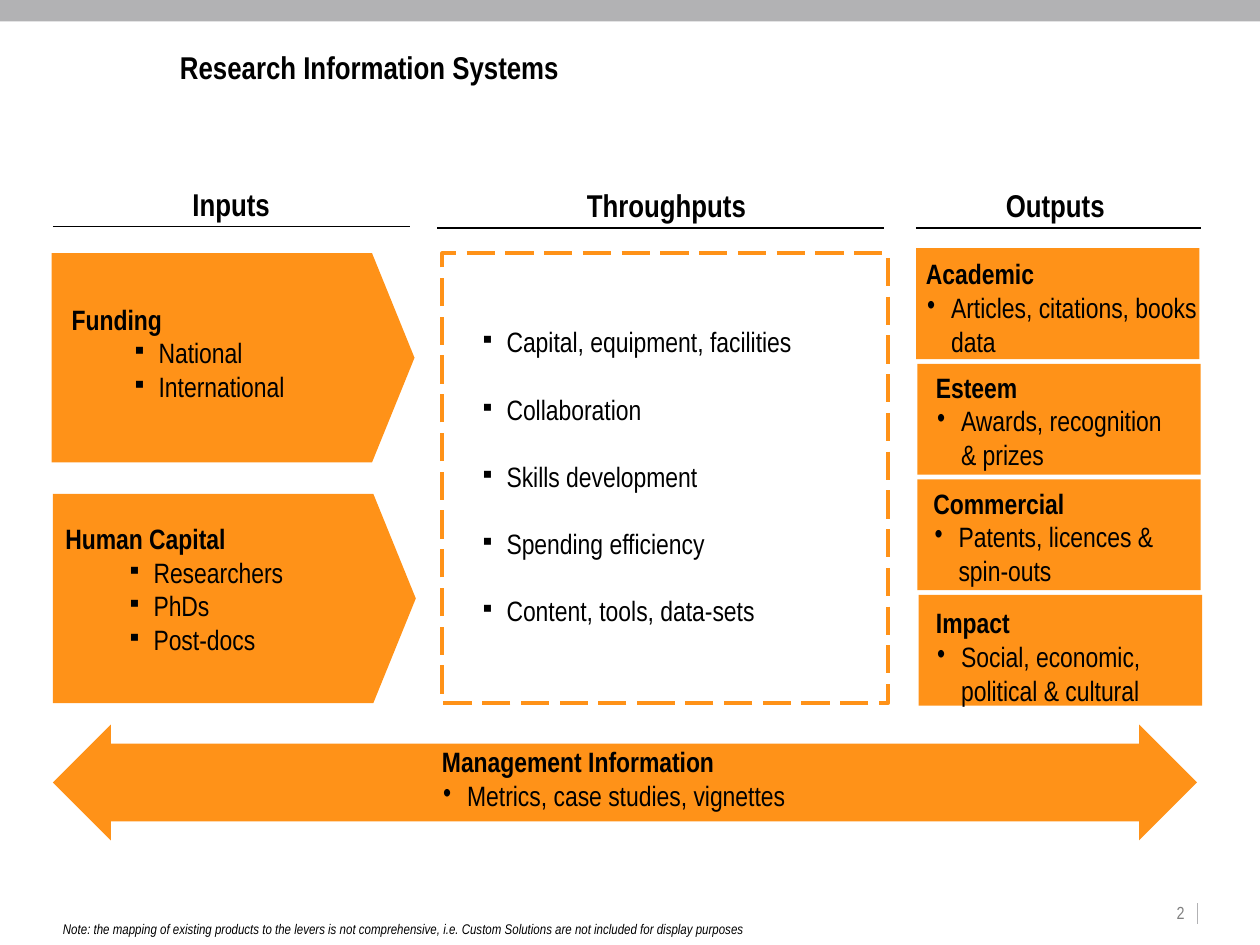
"""Build the Research Information Systems slide: inputs, throughputs and outputs."""
from lxml import etree
from pptx import Presentation
from pptx import util as u
from pptx.dml.color import RGBColor
from pptx.enum import dml, shapes, text
from pptx.oxml.ns import qn

FONT = "Arial Narrow"
COLORS = {"orange": "FF9218", "gray": "B2B2B4", "number": "808080", "black": "000000"}
SQUARE, DOT = "▪", "•"
HANG = 0.19

TITLE = "Research Information Systems"
NOTE = ("Note: the mapping of existing products to the levers is not comprehensive, "
        "i.e. Custom Solutions are not included for display purposes")
COLUMNS = [
    ("Inputs", (0.42, 1.42, 2.83), (0.42, 3.25, 1.8)),
    ("Throughputs", (3.5, 1.43, 3.58), (3.47, 7.02, 1.81)),
    ("Outputs", (7.25, 1.43, 2.25), (7.27, 9.53, 1.81)),
]
INPUTS = [
    ("Funding", ["National", "International"], (0.41, 2.01), (0.47, 2.35, 2.18, 0.91), 0.69),
    ("Human Capital", ["Researchers", "PhDs", "Post-docs"], (0.42, 3.92),
     (0.42, 4.09, 2.75, 1.18), 0.7),
]
THROUGHPUTS = ["Capital, equipment, facilities", "Collaboration", "Skills development",
               "Spending efficiency", "Content, tools, data-sets"]
OUTPUTS = [
    ("Academic", "Articles, citations, books data", 7.27, (7.25, 1.99, 2.35, 0.91)),
    ("Esteem", "Awards, recognition & prizes", 7.28, (7.33, 2.89, 2.1, 0.91)),
    ("Commercial", "Patents, licences & spin-outs", 7.28, (7.31, 3.81, 2.1, 0.91)),
    ("Impact", "Social, economic, political & cultural", 7.29, (7.33, 4.76, 2.1, 0.91)),
]
OUTPUT_TOP, OUTPUT_PITCH = 1.97, 0.917
MANAGEMENT = ("Management Information", "Metrics, case studies, vignettes")


def color(name):
    return RGBColor.from_string(COLORS[name])


def add_block(page, kind, place, fill=None, adjust=()):
    block = page.shapes.add_shape(kind, *map(u.Inches, place))
    block.shadow.inherit = False
    for index, value in enumerate(adjust):
        block.adjustments[index] = value
    if fill:
        block.fill.solid()
        block.fill.fore_color.rgb = color(fill)
    else:
        block.fill.background()
    block.line.fill.background()
    return block


def add_rule(page, start, end, shade="black", width=0.75):
    rule = page.shapes.add_connector(shapes.MSO_CONNECTOR.STRAIGHT,
                                     *map(u.Inches, (*start, *end)))
    rule.line.color.rgb = color(shade)
    rule.line.width = u.Pt(width)
    etree.SubElement(rule._element.spPr, qn("a:effectLst"))


def set_bullet(para, mark, margin):
    props = para._p.get_or_add_pPr()
    props.set("marL", str(u.Inches(margin)))
    props.set("indent", str(u.Inches(-HANG)))
    etree.SubElement(props, qn("a:buFont")).set("typeface", FONT)
    etree.SubElement(props, qn("a:buChar")).set("char", mark)


def add_text(page, place, lines, size=16, bold=False, italic=False, shade="black",
             align=text.PP_ALIGN.LEFT, bullet=None, gap=0, tight=False):
    """Add a text box; bullet is (mark, margin, level, first bulleted line)."""
    box = page.shapes.add_textbox(*map(u.Inches, place))
    frame = box.text_frame
    frame.word_wrap = True
    if tight:
        frame.margin_left = frame.margin_top = 0
    frame.text = "\n".join(lines)
    for index, para in enumerate(frame.paragraphs):
        para.alignment = align
        if index and gap:
            para.space_before = u.Pt(gap)
        bulleted = bullet and index >= bullet[3]
        if bulleted:
            para.level = bullet[2]
            set_bullet(para, *bullet[:2])
        for span in para.runs:
            font = span.font
            font.name, font.size = FONT, u.Pt(size)
            font.bold, font.italic = bold and not bulleted, italic
            font.color.rgb = color(shade)
    return box


def main():
    deck = Presentation()
    deck.slide_width, deck.slide_height = u.Inches(10), u.Inches(7.5)
    page = deck.slides.add_slide(deck.slide_layouts[6])
    kinds = shapes.MSO_SHAPE

    add_block(page, kinds.RECTANGLE, (0, 0, 10, 0.17), "gray")
    add_rule(page, (9.5, 7.17), (9.5, 7.33), "gray", 0.5)
    add_text(page, (1.33, 0.33, 7.75, 0.67), [TITLE], 18, bold=True)

    for heading, place, (left, right, level) in COLUMNS:
        add_rule(page, (left, level), (right, level))
        add_text(page, (*place, 0.4), [heading], 18, bold=True, align=text.PP_ALIGN.CENTER)

    for heading, items, corner, place, margin in INPUTS:
        add_block(page, kinds.PENTAGON, (*corner, 2.88, 1.66), "orange", [0.203])
        add_text(page, place, [heading, *items], bold=True, bullet=(SQUARE, margin, 2, 1))

    frame = add_block(page, kinds.RECTANGLE, (3.51, 2.01, 3.54, 3.57))
    frame.line.color.rgb = color("orange")
    frame.line.width = u.Pt(2)
    frame.line.dash_style = dml.MSO_LINE.LONG_DASH
    add_text(page, (3.83, 2.58, 2.92, 2.47), THROUGHPUTS,
             bullet=(SQUARE, HANG, 0, 0), gap=19.15, tight=True)

    for row, (heading, item, left, place) in enumerate(OUTPUTS):
        top = OUTPUT_TOP + row * OUTPUT_PITCH
        add_block(page, kinds.RECTANGLE, (left, top, 2.25, 0.88), "orange")
        add_text(page, place, [heading, item], bold=True, bullet=(DOT, 0.2, 1, 1))

    add_block(page, kinds.LEFT_RIGHT_ARROW, (0.42, 5.75, 9.08, 0.92), "orange", [0.67, 0.5])
    add_text(page, (3.41, 5.86, 3.67, 0.64), MANAGEMENT, bold=True, bullet=(DOT, 0.2, 1, 1))

    add_text(page, (8, 7.11, 1.5, 0.36), ["2"], 10, shade="number", align=text.PP_ALIGN.RIGHT)
    note = add_text(page, (0.5, 7.3, 8.83, 0.19), [NOTE], 8, italic=True, tight=True)
    note.text_frame.vertical_anchor = text.MSO_ANCHOR.MIDDLE
    deck.save("out.pptx")


if __name__ == "__main__":
    main()
